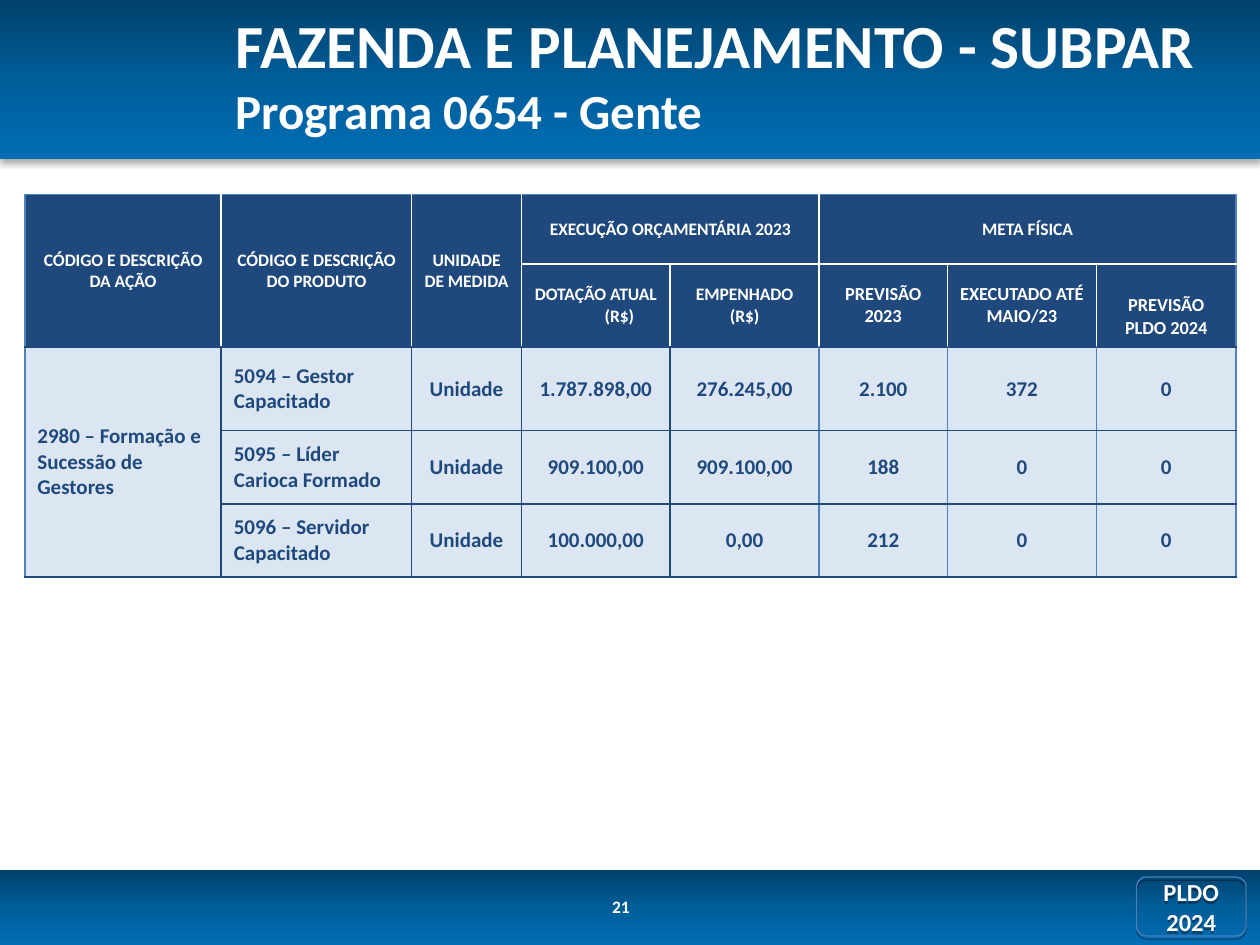
from lxml import etree
from pptx import Presentation
from pptx import util as u
from pptx.dml.color import RGBColor
from pptx.enum import shapes, text
from pptx.oxml.ns import qn

COLORS = {
    "white": "FFFFFF", "navy": "1F497D", "accent": "4F81BD", "pale": "DCE6F2",
    "badge": "4A7EBB", "black": "000000",
}
BAND_STOPS = [(0, "00416B"), (50, "005D99"), (100, "006EB5")]
FONT = "Calibri"
TITLE = [("FAZENDA E PLANEJAMENTO - SUBPAR", 35), ("Programa 0654 - Gente", 28)]
PAGE_NUMBER = "21"
BADGE = "PLDO 2024"

# (row, column, rows spanned, columns spanned, paragraphs)
HEADERS = [
    (0, 0, 2, 1, ["CÓDIGO E DESCRIÇÃO DA AÇÃO"]),
    (0, 1, 2, 1, ["CÓDIGO E DESCRIÇÃO DO PRODUTO"]),
    (0, 2, 2, 1, ["UNIDADE DE MEDIDA"]),
    (0, 3, 1, 2, ["EXECUÇÃO ORÇAMENTÁRIA 2023"]),
    (0, 5, 1, 3, ["META FÍSICA"]),
    (1, 3, 1, 1, ["DOTAÇÃO ATUAL", "(R$)"]),
    (1, 4, 1, 1, ["EMPENHADO", "(R$)"]),
    (1, 5, 1, 1, ["PREVISÃO 2023"]),
    (1, 6, 1, 1, ["EXECUTADO ATÉ MAIO/23"]),
    (1, 7, 1, 1, ["PREVISÃO PLDO 2024"]),
]
ACTION = "2980 – Formação e Sucessão de Gestores"
PRODUCTS = [
    ("5094 – Gestor Capacitado", "Unidade", "1.787.898,00", "276.245,00", "2.100", "372", "0"),
    ("5095 – Líder Carioca Formado", "Unidade", "909.100,00", "909.100,00", "188", "0", "0"),
    ("5096 – Servidor Capacitado", "Unidade", "100.000,00", "0,00", "212", "0", "0"),
]
COLUMN_WIDTHS = [3.96, 3.84, 2.21, 3, 3, 2.59, 3, 2.82]
ROW_HEIGHTS = [1.4, 1.68, 1.68, 1.48, 1.47]
HEADER_ROWS = 2


def rgb(name):
    return RGBColor.from_string(COLORS[name])


def add_xml(parent, tag, **attributes):
    return etree.SubElement(parent, qn(tag), {k: str(v) for k, v in attributes.items()})


def add_run(paragraph, content, size, color="white"):
    run = paragraph.add_run()
    run.text = content
    font = run.font
    font.name, font.size, font.bold = FONT, u.Pt(size), True
    font.color.rgb = rgb(color)


def set_shadow(shape, alpha, blur, distance):
    """Cast a black shadow straight down; alpha in percent, lengths in points."""
    shape.shadow.inherit = False
    effects = shape._element.spPr.find(qn("a:effectLst"))
    shadow = add_xml(effects, "a:outerShdw", blurRad=u.Pt(blur), dist=u.Pt(distance),
                     dir=5400000, rotWithShape=0)
    color = add_xml(shadow, "a:srgbClr", val=COLORS["black"])
    add_xml(color, "a:alpha", val=alpha * 1000)


def add_band(slide, top, height):
    """Add a full-width bar with a vertical gradient."""
    band = slide.shapes.add_shape(shapes.MSO_SHAPE.RECTANGLE, 0, u.Cm(top),
                                  u.Cm(25.4), u.Cm(height))
    gradient = add_xml(band._element.spPr, "a:gradFill", rotWithShape=1)
    stops = add_xml(gradient, "a:gsLst")
    for position, color in BAND_STOPS:
        stop = add_xml(stops, "a:gs", pos=position * 1000)
        add_xml(stop, "a:srgbClr", val=color)
    add_xml(gradient, "a:lin", ang=5400000, scaled=0)
    band.line.fill.background()
    set_shadow(band, 32, 3.5, 2.2)


def add_badge(slide):
    badge = slide.shapes.add_shape(shapes.MSO_SHAPE.ROUNDED_RECTANGLE, u.Cm(22.91),
                                   u.Cm(17.68), u.Cm(2.21), u.Cm(1.19))
    badge.fill.background()
    badge.line.color.rgb = rgb("badge")
    badge.line.width = u.Pt(0.75)
    set_shadow(badge, 35, 0, 1.8)
    frame = badge.text_frame
    frame.word_wrap = True
    frame.vertical_anchor = text.MSO_ANCHOR.MIDDLE
    paragraph = frame.paragraphs[0]
    paragraph.alignment = text.PP_ALIGN.CENTER
    add_run(paragraph, BADGE, 14)


def add_text_box(slide, left, top, width, height):
    frame = slide.shapes.add_textbox(u.Cm(left), u.Cm(top), u.Cm(width), u.Cm(height)).text_frame
    frame.word_wrap = True
    return frame


def add_title(slide):
    frame = add_text_box(slide, 4.5, 0.33, 20, 2.31)
    frame.vertical_anchor = text.MSO_ANCHOR.MIDDLE
    frame.margin_right = 0
    paragraph = frame.paragraphs[0]
    for index, (content, size) in enumerate(TITLE):
        if index:
            paragraph.add_line_break()
        add_run(paragraph, content, size)


def vertical_edge(row, edge):
    if edge in (0, len(COLUMN_WIDTHS)):
        return "accent"
    if row < HEADER_ROWS:
        return "white"
    return "navy" if edge < 5 else "accent"


def horizontal_edge(edge):
    return {0: "accent", 1: "white"}.get(edge, "navy")


def fill_cell(table, row, column, paragraphs, size, rows=1, columns=1, centered=True):
    cell = table.cell(row, column)
    if rows * columns > 1:
        cell.merge(table.cell(row + rows - 1, column + columns - 1))
    edges = {
        "a:lnL": vertical_edge(row, column), "a:lnR": vertical_edge(row, column + columns),
        "a:lnT": horizontal_edge(row), "a:lnB": horizontal_edge(row + rows),
    }
    properties = cell._tc.get_or_add_tcPr()
    for tag, color in edges.items():
        line = add_xml(properties, tag, w=u.Pt(1))
        add_xml(add_xml(line, "a:solidFill"), "a:srgbClr", val=COLORS[color])
    is_header = row < HEADER_ROWS
    cell.fill.solid()
    cell.fill.fore_color.rgb = rgb("navy" if is_header else "pale")
    cell.vertical_anchor = text.MSO_ANCHOR.MIDDLE
    frame = cell.text_frame
    for index, content in enumerate(paragraphs):
        paragraph = frame.add_paragraph() if index else frame.paragraphs[0]
        paragraph.alignment = text.PP_ALIGN.CENTER if centered else text.PP_ALIGN.LEFT
        add_run(paragraph, content, size, "white" if is_header else "navy")
    return cell


def add_budget_table(slide):
    frame = slide.shapes.add_table(len(ROW_HEIGHTS), len(COLUMN_WIDTHS), u.Cm(0.5), u.Cm(3.92),
                                   u.Cm(sum(COLUMN_WIDTHS)), u.Cm(sum(ROW_HEIGHTS)))
    table = frame.table
    table.first_row = table.horz_banding = False
    for column, width in zip(table.columns, COLUMN_WIDTHS):
        column.width = u.Cm(width)
    for row, height in zip(table.rows, ROW_HEIGHTS):
        row.height = u.Cm(height)

    for row, column, rows, columns, paragraphs in HEADERS:
        size = 10.5 if row == 1 and column >= 5 else 10
        fill_cell(table, row, column, paragraphs, size, rows, columns)
    currency = table.cell(1, 3).text_frame.paragraphs[1]
    currency._p.get_or_add_pPr().set("marL", str(u.Cm(0.95)))
    table.cell(1, 7).margin_top = u.Cm(0.58)

    fill_cell(table, HEADER_ROWS, 0, [ACTION], 12, rows=len(PRODUCTS), centered=False)
    for row, product in enumerate(PRODUCTS, HEADER_ROWS):
        for column, value in enumerate(product, 1):
            fill_cell(table, row, column, [value], 12, centered=column > 1)


def main():
    presentation = Presentation()
    presentation.slide_width, presentation.slide_height = u.Cm(25.4), u.Cm(19.05)
    slide = presentation.slides.add_slide(presentation.slide_layouts[6])
    add_band(slide, 0, 3.2)
    add_band(slide, 17.53, 1.52)
    number = add_text_box(slide, 12.09, 17.93, 1.19, 0.61)
    add_run(number.paragraphs[0], PAGE_NUMBER, 10)
    add_badge(slide)
    add_title(slide)
    add_budget_table(slide)
    presentation.save("out.pptx")


if __name__ == "__main__":
    main()
